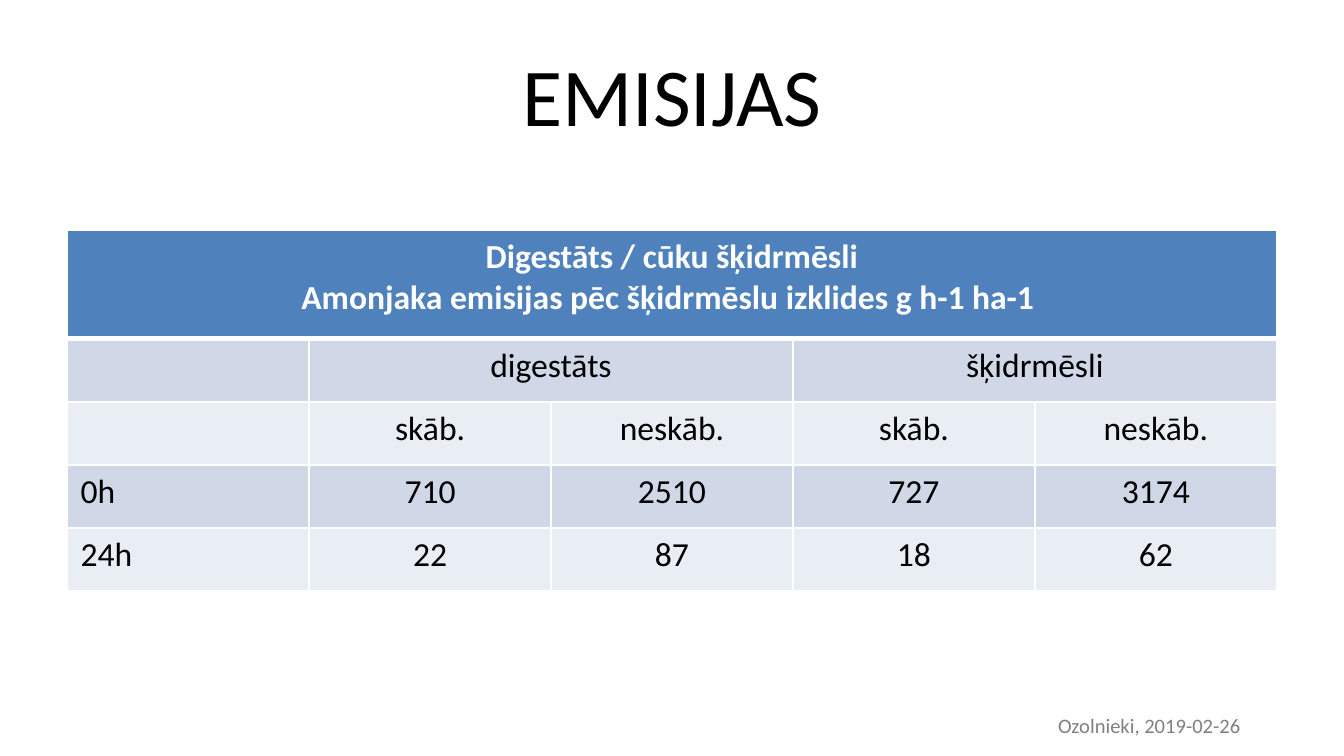
from dataclasses import dataclass

import pptx
import pptx.dml.color
import pptx.enum.text
import pptx.oxml
import pptx.oxml.ns
import pptx.util
from pptx.util import Inches

ALIGN = pptx.enum.text.PP_ALIGN
ANCHOR = pptx.enum.text.MSO_ANCHOR
FONT = "Calibri"
WHITE, BLACK, GRAY = "FFFFFF", "000000", "808080"
HEADER_FILL = "4F81BD"
BAND_FILLS = ("D0D8E8", "E9EDF4")
PAGE_WIDTH = 10
PAGE_HEIGHT = PAGE_WIDTH * 9 / 16


@dataclass
class TableCell:
    row: int
    column: int
    text: str
    span: int = 1


def color(code: str) -> pptx.dml.color.RGBColor:
    return pptx.dml.color.RGBColor.from_string(code)


def write(frame, text: str, *, size: float = 18, fill: str = BLACK,
          bold: bool = False, align=ALIGN.CENTER) -> None:
    """Fill a text frame, one paragraph for each line of the text."""
    for index, line in enumerate(text.split("\n")):
        para = frame.add_paragraph() if index else frame.paragraphs[0]
        para.alignment = align
        span = para.add_run()
        span.text = line
        span.font.name = FONT
        span.font.size = pptx.util.Pt(size)
        span.font.bold = bold
        span.font.color.rgb = color(fill)


def add_text(page, left: float, top: float, width: float, height: float,
             text: str, *, anchor=ANCHOR.TOP, **style) -> None:
    box = page.shapes.add_textbox(Inches(left), Inches(top), Inches(width), Inches(height))
    box.text_frame.word_wrap = True
    box.text_frame.vertical_anchor = anchor
    write(box.text_frame, text, **style)


def set_borders(cell, widths: dict[str, float]) -> None:
    """Draw white cell borders; they must come before the fill."""
    properties = cell._tc.get_or_add_tcPr()
    for index, (side, width) in enumerate(widths.items()):
        line = pptx.oxml.parse_xml(
            f'<a:ln{side} {pptx.oxml.ns.nsdecls("a")} w="{pptx.util.Pt(width)}">'
            f'<a:solidFill><a:srgbClr val="{WHITE}"/></a:solidFill></a:ln{side}>')
        properties.insert(index, line)


def add_emission_table(page, cells: list[TableCell]) -> None:
    row_heights = [0.81] + [0.47] * 4
    column_count = 5
    frame = page.shapes.add_table(len(row_heights), column_count, Inches(0.5),
                                  Inches(1.71), Inches(9), Inches(sum(row_heights)))
    table = frame.table
    for column in table.columns:
        column.width = Inches(9 / column_count)

    # Row bands and borders, with a thick line under the header
    for row, height in enumerate(row_heights):
        table.rows[row].height = Inches(height)
        for cell in table.rows[row].cells:
            cell.fill.solid()
            cell.fill.fore_color.rgb = color(BAND_FILLS[(row - 1) % 2] if row else HEADER_FILL)
            set_borders(cell, {"L": 1, "R": 1, "T": 3 if row == 1 else 1,
                               "B": 1 if row else 3})

    # Cell contents
    for item in cells:
        cell = table.cell(item.row, item.column)
        if item.span > 1:
            cell.merge(table.cell(item.row, item.column + item.span - 1))
        header = item.row == 0
        write(cell.text_frame, item.text, bold=header, fill=WHITE if header else BLACK,
              align=ALIGN.CENTER if header or item.column else ALIGN.LEFT)


def main() -> None:
    deck = pptx.Presentation()
    deck.slide_width, deck.slide_height = Inches(PAGE_WIDTH), Inches(PAGE_HEIGHT)
    page = deck.slides.add_slide(deck.slide_layouts[6])

    # Footer and title
    add_text(page, 7, 5.26, 2.33, 0.3, "Ozolnieki, 2019-02-26",
             size=11, fill=GRAY, align=ALIGN.RIGHT)
    add_text(page, 0.5, 0.23, 9, 0.94, "EMISIJAS", size=44, anchor=ANCHOR.MIDDLE)

    # Emissions for each fertiliser, acidified and not
    cells = [
        TableCell(0, 0, "Digestāts / cūku šķidrmēsli\n"
                  "Amonjaka emisijas pēc šķidrmēslu izklides g h-1 ha-1 ", span=5),
        TableCell(1, 1, "digestāts", span=2),
        TableCell(1, 3, "šķidrmēsli", span=2),
    ]
    cells += [TableCell(2, column, text)
              for column, text in enumerate(["skāb.", "neskāb."] * 2, start=1)]
    measurements = [("0h", 710, 2510, 727, 3174), ("24h", 22, 87, 18, 62)]
    cells += [TableCell(row, column, str(value))
              for row, values in enumerate(measurements, start=3)
              for column, value in enumerate(values)]
    add_emission_table(page, cells)

    deck.save("out.pptx")


if __name__ == "__main__":
    main()
